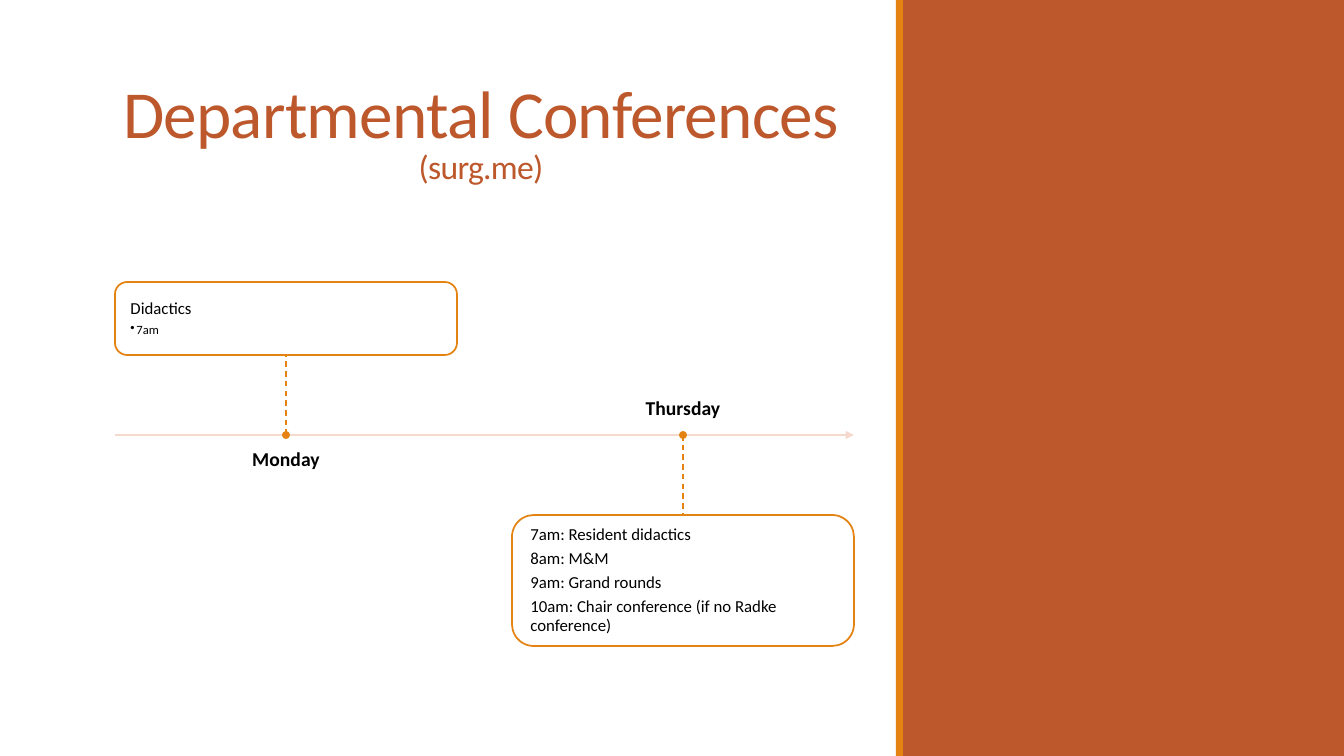
import pptx
import pptx.util
import pptx.dml.color
import pptx.enum.dml
import pptx.enum.shapes
import pptx.enum.text
import pptx.oxml
import pptx.oxml.ns
from lxml import etree

PX = 914400 / 100.8
COLORS = {"rust": "BD582C", "orange": "E48312", "axis": "F5D9CC",
          "white": "FFFFFF", "black": "000000"}
SHAPES = pptx.enum.shapes.MSO_SHAPE
ANCHOR = pptx.enum.text.MSO_ANCHOR
ALIGN = pptx.enum.text.PP_ALIGN
qn = pptx.oxml.ns.qn


def px(*lengths):
    """Turn pixel lengths into EMU."""
    return [round(length * PX) for length in lengths]


def rgb(name):
    return pptx.dml.color.RGBColor.from_string(COLORS[name])


prs = pptx.Presentation()
prs.slide_width, prs.slide_height = px(1344, 756)
slide = prs.slides.add_slide(prs.slide_layouts[6])
shapes = slide.shapes

# Side panel with its accent stripe
for left, width, color in [(898, 446, "rust"), (896, 7, "orange")]:
    band = shapes.add_shape(SHAPES.RECTANGLE, *px(left, 0, width, 756))
    band.shadow.inherit = False
    band.fill.solid()
    band.fill.fore_color.rgb = rgb(color)
    band.line.fill.background()

# Title
title = shapes.add_textbox(*px(109, 31, 744, 160)).text_frame
title.word_wrap = True
title.vertical_anchor = ANCHOR.BOTTOM
heading = title.paragraphs[0]
heading.text = "Departmental Conferences\v(surg.me)"
heading.alignment = ALIGN.CENTER
heading.line_spacing = 0.85
for run, size in zip(heading.runs, (48, 24)):
    run.font.size = pptx.util.Pt(size)
    run.font.name = "Calibri"
    run.font.color.rgb = rgb("rust")
    run.font._element.set("spc", "-50")

# Timeline: axis first, then one event per day
AXIS_Y, AXIS_LEFT, AXIS_RIGHT = 435, 115, 854
BOX_W, LABEL_W, LABEL_H, LABEL_GAP, DOT = 342, 300, 48, 15, 6

axis = shapes.add_connector(pptx.enum.shapes.MSO_CONNECTOR.STRAIGHT,
                            *px(AXIS_LEFT, AXIS_Y, AXIS_RIGHT, AXIS_Y))
axis.line.color.rgb = rgb("axis")
axis.line.width = pptx.util.Pt(1.25)
etree.SubElement(axis.line._get_or_add_ln(), qn("a:tailEnd"), type="triangle")
etree.SubElement(axis._element.spPr, qn("a:effectLst"))

# day, box left, box top, box height, entries as (text, size, bulleted)
events = [
    ("Monday", AXIS_LEFT, 282, 73,
     [("Didactics", 12, False), ("7am", 9, True)]),
    ("Thursday", AXIS_RIGHT - BOX_W, 515, 131,
     [("7am: Resident didactics", 12, False),
      ("8am: M&M", 12, False),
      ("9am: Grand rounds", 12, False),
      ("10am: Chair conference (if no Radke conference)", 12, False)]),
]

for day, box_left, box_top, box_height, entries in events:
    center = box_left + BOX_W // 2
    box_above = box_top < AXIS_Y

    label_top = AXIS_Y + LABEL_GAP if box_above else AXIS_Y - LABEL_GAP - LABEL_H
    label = shapes.add_textbox(
        *px(center - LABEL_W // 2, label_top, LABEL_W, LABEL_H)).text_frame
    label.word_wrap = True
    label.vertical_anchor = ANCHOR.TOP if box_above else ANCHOR.BOTTOM
    label.margin_left = label.margin_right = 0
    label.margin_top = label.margin_bottom = 0
    day_name = label.paragraphs[0]
    day_name.text = day
    day_name.alignment = ALIGN.CENTER
    day_name.line_spacing = 0.9
    day_name.font.size = pptx.util.Pt(14)
    day_name.font.bold = True
    day_name.runs[0].font.size = pptx.util.Pt(14)
    day_name.runs[0].font.bold = True
    day_name.runs[0].font.name = "Calibri"
    day_name.runs[0].font.color.rgb = rgb("black")

    box = shapes.add_shape(SHAPES.ROUNDED_RECTANGLE,
                           *px(box_left, box_top, BOX_W, box_height))
    box.shadow.inherit = False
    box.fill.solid()
    box.fill.fore_color.rgb = rgb("white")
    box.line.color.rgb = rgb("orange")
    box.line.width = pptx.util.Pt(1.25)
    details = box.text_frame
    details.word_wrap = True
    details.vertical_anchor = ANCHOR.MIDDLE
    details.margin_left, details.margin_right = px(12, 12)
    details.margin_top, details.margin_bottom = px(12, 12)
    details.text = "\n".join(text for text, size, bulleted in entries)
    for entry, (text, size, bulleted) in zip(details.paragraphs, entries):
        entry.alignment = ALIGN.LEFT
        entry.line_spacing = 0.9
        entry.space_after = pptx.util.Pt(1.35 if bulleted else 4.2)
        entry.runs[0].font.size = pptx.util.Pt(size)
        entry.runs[0].font.name = "Calibri"
        entry.runs[0].font.color.rgb = rgb("black")
        if bulleted:
            properties = entry._p.get_or_add_pPr()
            indent = px(6)[0]
            properties.set("lvl", "1")
            properties.set("marL", str(indent))
            properties.set("indent", str(-indent))
            etree.SubElement(properties, qn("a:buChar"), char="•")

    stem = shapes.add_connector(pptx.enum.shapes.MSO_CONNECTOR.STRAIGHT,
                                *px(center, AXIS_Y, center, box_top))
    stem.end_connect(box, 2 if box_above else 0)
    stem.line.color.rgb = rgb("orange")
    stem.line.width = pptx.util.Pt(1)
    stem.line.dash_style = pptx.enum.dml.MSO_LINE.DASH
    etree.SubElement(stem._element.spPr, qn("a:effectLst"))

    dot = shapes.add_shape(SHAPES.OVAL, *px(center - DOT // 2, AXIS_Y - DOT // 2, DOT, DOT))
    dot.shadow.inherit = False
    dot.fill.solid()
    dot.fill.fore_color.rgb = rgb("orange")
    dot.line.color.rgb = rgb("orange")
    dot.line.width = pptx.util.Pt(1.25)

prs.save("out.pptx")
